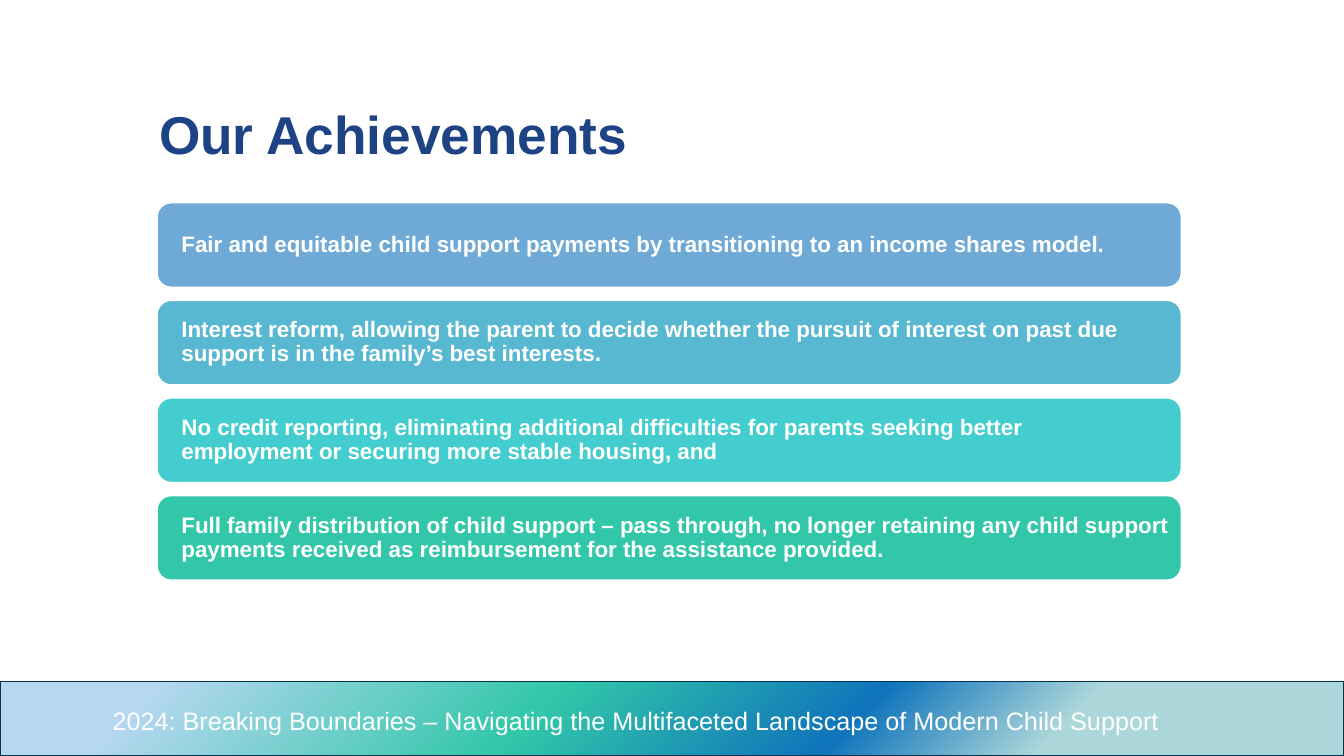
"""Build the "Our Achievements" slide with four cards and a gradient footer."""
from copy import deepcopy

from pptx import Presentation
from pptx.dml.color import RGBColor
from pptx.enum.shapes import MSO_SHAPE
from pptx.enum.text import MSO_ANCHOR, PP_ALIGN
from pptx.util import Cm, Pt

RECTANGLE = MSO_SHAPE.RECTANGLE
ROUNDED = MSO_SHAPE.ROUNDED_RECTANGLE
MIDDLE = MSO_ANCHOR.MIDDLE
LEFT = PP_ALIGN.LEFT

COLORS = {
    "white": "FFFFFF",
    "navy": "1D4384",
    "outline": "073352",
    "pale blue": "B7D7F1",
    "green": "32C7A9",
    "blue": "0F74BB",
    "pale teal": "ABD6DA",
    "sky": "6EAAD5",
    "lagoon": "59B8D1",
    "turquoise": "44CDCE",
}
FOOTER_STOPS = [(0.11, "pale blue"), (0.4, "green"), (0.63, "blue"), (0.78, "pale teal")]
CARDS = [
    ("sky", ["Fair and equitable child support payments by transitioning to an income shares model."]),
    ("lagoon", ["Interest reform, allowing the parent to decide whether the pursuit of interest "
                "on past due support is in the family’s best interests."]),
    ("turquoise", ["No credit reporting, eliminating additional difficulties for parents seeking better",
                   "employment or securing more stable housing, and"]),
    ("green", ["Full family distribution of child support – pass through, no longer retaining any "
               "child support payments received as reimbursement for the assistance provided."]),
]
CARD_TOP, CARD_PITCH = 5.11, 2.46


def rgb(name):
    return RGBColor.from_string(COLORS[name])


def write(shape, lines, size, color, bold):
    shape.text_frame.word_wrap = True
    paragraph = shape.text_frame.paragraphs[0]
    paragraph.alignment = LEFT
    for index, line in enumerate(lines):
        if index:
            paragraph.add_line_break()
        run = paragraph.add_run()
        run.text = line
        run.font.name = "Arial"
        run.font.size = Pt(size)
        run.font.bold = bold
        run.font.color.rgb = rgb(color)
    return paragraph


presentation = Presentation()
presentation.slide_width = Cm(33.87)
presentation.slide_height = Cm(19.05)
slide = presentation.slides.add_slide(presentation.slide_layouts[6])

footer = slide.shapes.add_shape(RECTANGLE, 0, Cm(17.17), presentation.slide_width, Cm(1.88))
footer.shadow.inherit = False
footer.line.color.rgb = rgb("outline")
footer.line.width = Pt(1)
footer.fill.gradient()
footer.fill.gradient_angle = 315
stop_list = footer._element.spPr.xpath("./a:gradFill/a:gsLst")[0]
for _ in range(len(FOOTER_STOPS) - len(stop_list)):
    stop_list.append(deepcopy(stop_list[0]))
for stop, (position, color) in zip(footer.fill.gradient_stops, FOOTER_STOPS):
    stop.position = position
    stop.color.rgb = rgb(color)

footer_text = slide.shapes.add_textbox(Cm(2.59), Cm(17.65), Cm(27.69), Cm(1.02))
write(footer_text,
      ["2024: Breaking Boundaries – Navigating the Multifaceted Landscape of Modern Child Support"],
      18, "white", False)

for row, (color, lines) in enumerate(CARDS):
    card = slide.shapes.add_shape(ROUNDED, Cm(3.96), Cm(CARD_TOP + row * CARD_PITCH), Cm(25.81), Cm(2.13))
    card.shadow.inherit = False
    card.fill.solid()
    card.fill.fore_color.rgb = rgb(color)
    card.line.color.rgb = rgb("white")
    card.line.width = Pt(1)
    frame = card.text_frame
    frame.vertical_anchor = MIDDLE
    frame.margin_left = Cm(0.51)
    frame.margin_right = frame.margin_top = frame.margin_bottom = Cm(0.18)
    write(card, lines, 16, "white", True).line_spacing = 0.9

title = slide.shapes.add_textbox(Cm(3.76), Cm(2.44), Cm(25.2), Cm(1.88))
write(title, ["Our Achievements"], 38, "navy", True)

presentation.save("out.pptx")
